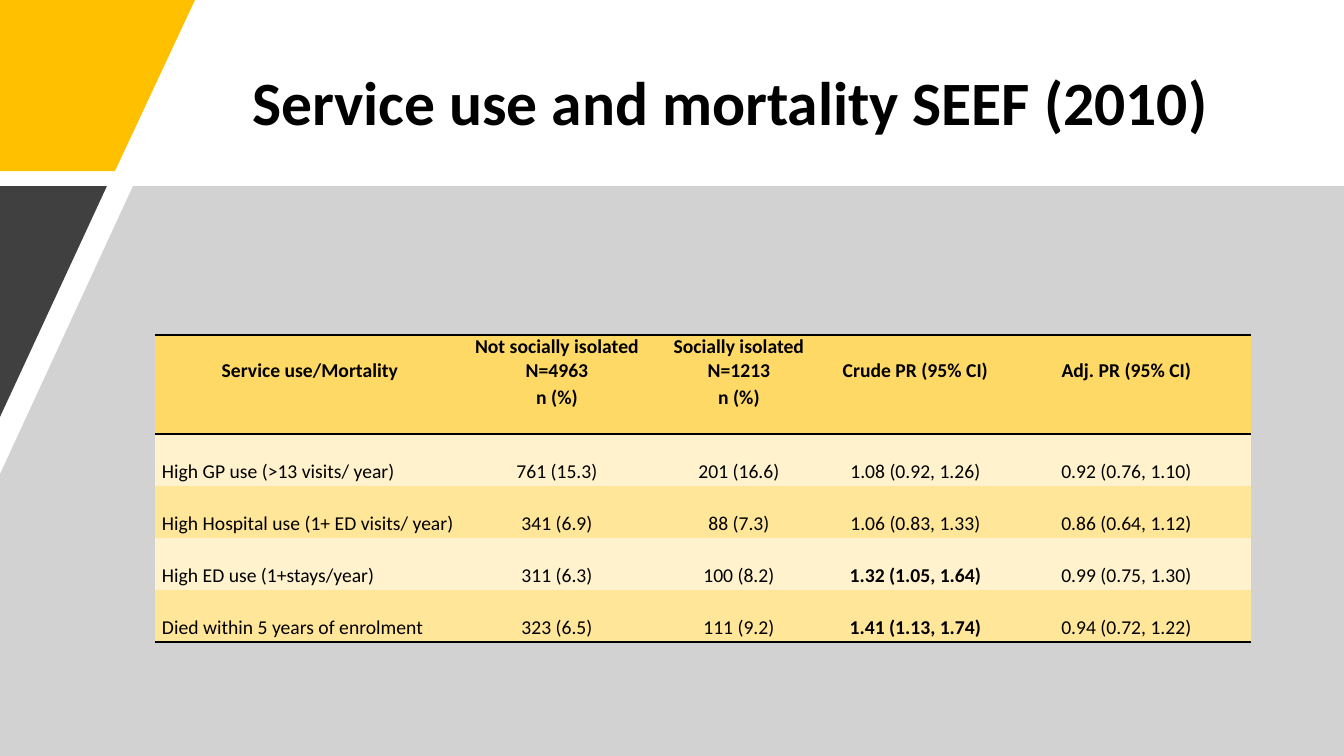
from lxml.etree import SubElement
from pptx import Presentation
from pptx.dml.color import RGBColor
from pptx.enum.text import MSO_ANCHOR as Anchor, PP_ALIGN as Align
from pptx.oxml import parse_xml
from pptx.oxml.ns import nsdecls, qn
from pptx.util import Emu, Pt

SCALE = 914400 / 100.8
FONT = "Calibri"
HEADINGS = ["Service use/Mortality", "Not socially isolated\nN=4963",
            "Socially isolated\nN=1213", "Crude PR (95% CI)", "Adj. PR (95% CI)"]
ROWS = [
    HEADINGS,
    ["", "n (%)", "n (%)", "", ""],
    ["High GP use (>13 visits/ year)", "761 (15.3)", "201 (16.6)",
     "1.08 (0.92, 1.26)", "0.92 (0.76, 1.10)"],
    ["High Hospital use (1+ ED visits/ year)", "341 (6.9)", "88 (7.3)",
     "1.06 (0.83, 1.33)", "0.86 (0.64, 1.12)"],
    ["High ED use (1+stays/year)", "311 (6.3)", "100 (8.2)",
     "1.32 (1.05, 1.64)", "0.99 (0.75, 1.30)"],
    ["Died within 5 years of enrolment", "323 (6.5)", "111 (9.2)",
     "1.41 (1.13, 1.74)", "0.94 (0.72, 1.22)"],
]
HEADER_ROWS = 2
SPANNED_COLUMNS = (0, 3, 4)
SIGNIFICANT = {(4, 3), (5, 3)}
COLUMN_WIDTHS = [310, 184, 180, 173, 249]
ROW_HEIGHTS = [51, 48, 52, 52, 52, 52]


def px(length):
    """Turn pixels into EMU."""
    return Emu(round(length * SCALE))


def paint(fill, color):
    """Give a fill one solid hex colour."""
    fill.solid()
    fill.fore_color.rgb = RGBColor.from_string(color)


def style_font(font, size, bold):
    """Set the slide's typeface in black."""
    font.name, font.size, font.bold = FONT, Pt(size), bold
    font.color.rgb = RGBColor.from_string("000000")


def add_title(page, box, text):
    """Place the title placeholder in its box."""
    title = page.shapes.title
    title.left, title.top, title.width, title.height = map(px, box)
    frame = title.text_frame
    frame.text = text
    frame.word_wrap = True
    frame.vertical_anchor = Anchor.MIDDLE
    para = frame.paragraphs[0]
    para.alignment = Align.LEFT
    para.line_spacing = 0.9
    style_font(para.font, 44, True)


def add_panel(page, origin, points, color, opacity=100):
    """Draw a filled polygon with corners relative to its origin."""
    left, top = origin
    corners = [(left + x, top + y) for x, y in points]
    builder = page.shapes.build_freeform(*corners[0], scale=SCALE)
    builder.add_line_segments(corners[1:], close=True)
    panel = builder.convert_to_shape()
    panel.shadow.inherit = False
    panel.line.fill.background()
    paint(panel.fill, color)
    if opacity < 100:
        shade = panel.fill._xPr.find(qn("a:solidFill"))[0]
        SubElement(shade, qn("a:alpha"), val=str(opacity * 1000))


def add_backdrop(page, box):
    """Draw the slanted corner and the grey body."""
    left, top, width, height = box
    body = top + 186
    body_height = height - 186
    add_panel(page, (left, top), [(0, 0), (195, 0), (115, 171), (0, 171)], "FFC000")
    add_panel(page, (left, body), [(133, 0), (width, 0), (width, body_height),
                                   (0, body_height), (0, 288)], "A6A6A6", 50)
    add_panel(page, (left, body), [(0, 0), (107, 0), (0, 231)], "404040")


def set_borders(cell, top, bottom):
    """Rule the top and bottom edges as asked and clear the rest."""
    ruled = {"lnL": False, "lnR": False, "lnT": top, "lnB": bottom}
    properties = cell._tc.get_or_add_tcPr()
    for position, (edge, shown) in enumerate(ruled.items()):
        ink = '<a:solidFill><a:srgbClr val="000000"/></a:solidFill>' if shown else "<a:noFill/>"
        border = parse_xml(f'<a:{edge} {nsdecls("a")} w="12700">{ink}</a:{edge}>')
        properties.insert(position, border)


def fill_cell(cell, row, column, text):
    """Write and format one table cell."""
    header = row < HEADER_ROWS
    spanned = header and column in SPANNED_COLUMNS
    cell.margin_left = cell.margin_right = px(7)
    cell.margin_top = px(24 if spanned else 0)
    cell.margin_bottom = 0
    cell.vertical_anchor = Anchor.TOP if header else Anchor.MIDDLE
    paint(cell.fill, "FFD966" if header else ("FFF2CC", "FFE699")[row % 2])
    set_borders(cell, row in (0, HEADER_ROWS),
                row in (HEADER_ROWS - 1, len(ROWS) - 1) or cell.is_merge_origin)
    cell.text = text
    for para in cell.text_frame.paragraphs:
        para.alignment = Align.CENTER if header or column else Align.LEFT
        para.line_spacing = 1.0 if header else 2.0
        style_font(para.font, 14, header or (row, column) in SIGNIFICANT)


def add_results(page, origin):
    """Build the service use and mortality table."""
    left, top = origin
    table = page.shapes.add_table(
        len(ROWS), len(COLUMN_WIDTHS), px(left), px(top),
        px(sum(COLUMN_WIDTHS)), px(sum(ROW_HEIGHTS))).table
    table.first_row = table.horz_banding = False
    for column, width in zip(table.columns, COLUMN_WIDTHS):
        column.width = px(width)
    for row, height in zip(table.rows, ROW_HEIGHTS):
        row.height = px(height)
    for column in SPANNED_COLUMNS:
        table.cell(0, column).merge(table.cell(HEADER_ROWS - 1, column))
    for row, texts in enumerate(ROWS):
        for column, text in enumerate(texts):
            fill_cell(table.cell(row, column), row, column, text)


def main():
    """Build and save the deck."""
    deck = Presentation()
    deck.slide_width, deck.slide_height = px(1344), px(756)
    page = deck.slides.add_slide(deck.slide_layouts[5])
    paint(page.background.fill, "FFFFFF")
    add_title(page, (242, 40, 1032, 131), "Service use and mortality SEEF (2010)")
    add_backdrop(page, (0, 0, 1344, 756))
    add_results(page, (155, 335))
    deck.save("out.pptx")


if __name__ == "__main__":
    main()
